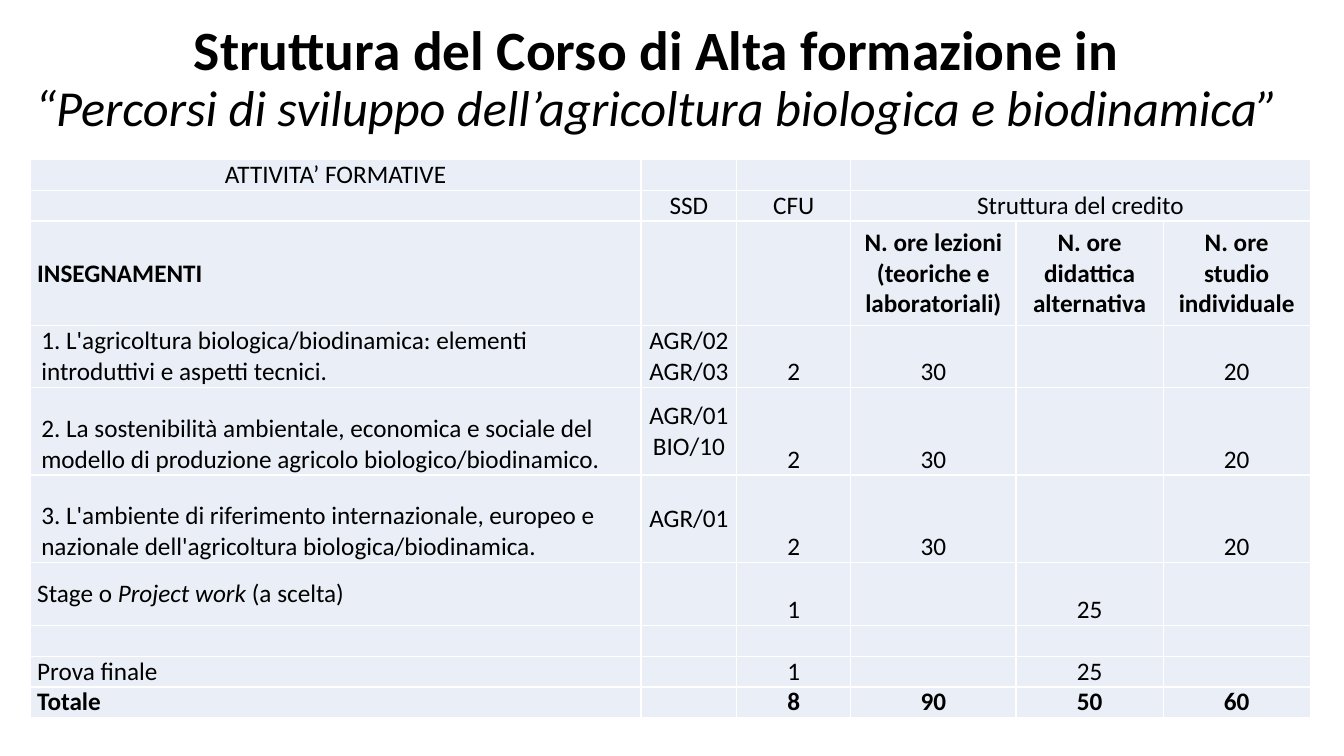
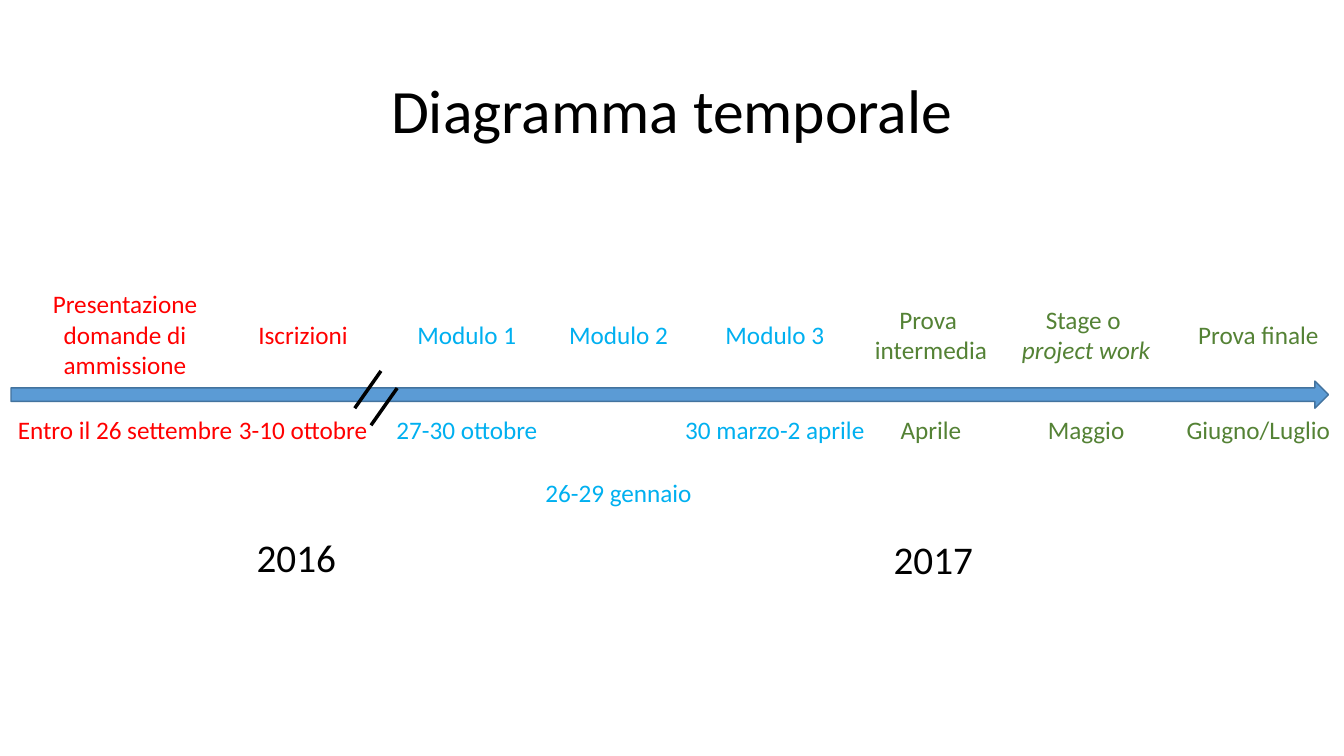
from dataclasses import dataclass
from typing import NamedTuple

from lxml import etree
from pptx import Presentation
from pptx import util as u
from pptx.dml.color import RGBColor
from pptx.enum import shapes, text
from pptx.oxml import ns

Pt = u.Pt
ALIGN, ANCHOR = text.PP_ALIGN, text.MSO_ANCHOR


@dataclass(frozen=True)
class Theme:
    font: str = "Calibri"
    ink: str = "000000"
    paper: str = "FFFFFF"
    cell: str = "EAEFF7"
    arrow: str = "5B9BD5"
    arrow_edge: str = "43739E"
    admission: str = "FF0000"
    module: str = "00B0F0"
    closing: str = "548235"
    title_size: float = 44
    course_size: float = 39.6
    subtitle_size: float = 36
    year_size: float = 28
    body_size: float = 18


THEME = Theme()


class Box(NamedTuple):
    left: float
    top: float
    width: float
    height: float

    def lengths(self) -> list[u.Length]:
        return [Pt(value) for value in self]


class Span(NamedTuple):
    text: str
    size: float = THEME.body_size
    bold: bool = False
    italic: bool = False
    color: str = THEME.ink


class Row(NamedTuple):
    height: float
    cells: tuple[str, ...]
    bold: bool = False
    first_align: ALIGN = ALIGN.LEFT
    first_anchor: ANCHOR = ANCHOR.MIDDLE
    other_anchor: ANCHOR = ANCHOR.BOTTOM
    indent: float = 0


class Event(NamedTuple):
    center: float
    color: str
    label: str
    label_width: float
    date: str
    date_width: float
    date_middle: float = 306.7
    wrap_label: bool = False


# Course table: asterisks enclose italics, a new line starts a paragraph
COLUMN_WIDTHS = (436.3, 68.4, 81.4, 118.1, 105.1, 105.1)
MERGED_ROWS = (0, 1)
COURSE = dict(first_anchor=ANCHOR.BOTTOM, indent=2.9)
ROWS = (
    Row(21.2, ("ATTIVITA’ FORMATIVE", "", "", "", "", ""), first_align=ALIGN.CENTER),
    Row(21.2, ("", "SSD", "CFU", "Struttura del credito", "", "")),
    Row(75, ("INSEGNAMENTI", "", "", "N. ore lezioni (teoriche e laboratoriali)",
             "N. ore didattica alternativa", "N. ore\nstudio individuale"),
        bold=True, other_anchor=ANCHOR.MIDDLE),
    Row(42, ("1. L'agricoltura biologica/biodinamica: elementi introduttivi e "
             "aspetti tecnici.", "AGR/02\nAGR/03", "2", "30", "", "20"), **COURSE),
    Row(62.5, ("2. La sostenibilità ambientale, economica e sociale del modello di "
               "produzione agricolo biologico/biodinamico.", "AGR/01\nBIO/10",
               "2", "30", "", "20"), **COURSE),
    Row(62.5, ("3. L'ambiente di riferimento internazionale, europeo e nazionale "
               "dell'agricoltura biologica/biodinamica.", "AGR/01",
               "2", "30", "", "20"), **COURSE),
    Row(45, ("Stage o *Project work *(a scelta)", "", "1", "", "25", "")),
    Row(21.2, ("",) * 6),
    Row(21.2, ("Prova finale", "", "1", "", "25", "")),
    Row(21.2, ("Totale", "", "8", "90", "50", "60"), bold=True),
)

# Timeline
LABEL_MIDDLE = 239
EVENTS = (
    Event(89.3, THEME.admission, "Presentazione domande di ammissione", 168.5,
          "Entro il 26 settembre", 170, wrap_label=True),
    Event(216.5, THEME.admission, "Iscrizioni", 79.2, "3-10 ottobre", 111.6),
    Event(333.5, THEME.module, "Modulo 1", 85.7, "27-30 ottobre", 116.6),
    Event(441.8, THEME.module, "Modulo 2", 85.7, "26-29 gennaio", 120.2, 352),
    Event(553.5, THEME.module, "Modulo 3", 85.7, "30 marzo-2 aprile", 144),
    Event(665, THEME.closing, "Prova \nintermedia", 95.8, "Aprile", 58.3),
    Event(775.8, THEME.closing, "Stage o \n*project work*", 107.3, "Maggio", 69.8),
    Event(898.8, THEME.closing, "Prova finale", 101.5, "Giugno/Luglio", 118),
)
YEARS = (("2016", 211.7, 397.8), ("2017", 666.7, 399.2))
BREAK_STARTS = ((253.4, 291.6), (265, 303.8))
BREAK_RUN, BREAK_RISE = 18.7, 26.6


def set_format(target, **values) -> None:
    for name, value in values.items():
        setattr(target, name, value)


def add_span(paragraph, span: Span) -> None:
    run = paragraph.add_run()
    run.text = span.text
    set_format(run.font, name=THEME.font, size=Pt(span.size), bold=span.bold,
               italic=span.italic)
    run.font.color.rgb = RGBColor.from_string(span.color)


def write_text(frame, content: str, align: ALIGN, style: Span, indent: float = 0) -> None:
    for index, line in enumerate(content.split("\n")):
        paragraph = frame.add_paragraph() if index else frame.paragraphs[0]
        paragraph.alignment = align
        if indent:
            paragraph._p.get_or_add_pPr().set("marL", str(Pt(indent)))
        for part, words in enumerate(line.split("*")):
            if words:
                add_span(paragraph, style._replace(text=words, italic=part % 2 == 1))


def add_titled_slide(deck, box: Box, lines: tuple[Span, ...]):
    slide = deck.slides.add_slide(deck.slide_layouts[5])
    title = slide.shapes.title
    set_format(title, **dict(zip(Box._fields, box.lengths())))
    set_format(title.text_frame, vertical_anchor=ANCHOR.MIDDLE, word_wrap=True,
               auto_size=text.MSO_AUTO_SIZE.NONE)
    paragraph = title.text_frame.paragraphs[0]
    set_format(paragraph, alignment=ALIGN.CENTER, line_spacing=0.9)
    for index, line in enumerate(lines):
        if index:
            paragraph.add_line_break()
        add_span(paragraph, line)
    return slide


def add_borders(cell) -> None:
    properties = cell._tc.get_or_add_tcPr()
    for index, side in enumerate(("a:lnL", "a:lnR", "a:lnT", "a:lnB")):
        border = etree.Element(ns.qn(side), w=str(Pt(1)))
        fill = etree.SubElement(border, ns.qn("a:solidFill"))
        etree.SubElement(fill, ns.qn("a:srgbClr"), val=THEME.paper)
        properties.insert(index, border)


def add_course_table(slide) -> None:
    box = Box(21.6, 113.8, sum(COLUMN_WIDTHS), sum(row.height for row in ROWS))
    table = slide.shapes.add_table(len(ROWS), len(COLUMN_WIDTHS), *box.lengths()).table
    set_format(table, first_row=False, horz_banding=False)
    for column, width in zip(table.columns, COLUMN_WIDTHS):
        column.width = Pt(width)
    for r, row in enumerate(ROWS):
        table.rows[r].height = Pt(row.height)
        for c, content in enumerate(row.cells):
            cell = table.cell(r, c)
            first = c == 0
            anchor = row.first_anchor if first else row.other_anchor
            set_format(cell, margin_left=Pt(5), margin_right=Pt(5), margin_top=0,
                       margin_bottom=0,
                       vertical_anchor=ANCHOR.MIDDLE if c == 1 else anchor)
            cell.fill.solid()
            cell.fill.fore_color.rgb = RGBColor.from_string(THEME.cell)
            add_borders(cell)
            write_text(cell.text_frame, content,
                       row.first_align if first else ALIGN.CENTER,
                       Span("", bold=row.bold), row.indent if first else 0)
    for r in MERGED_ROWS:
        table.cell(r, 3).merge(table.cell(r, 5))


def add_label(slide, box: Box, content: str, style: Span, wrap: bool = False) -> None:
    frame = slide.shapes.add_textbox(*box.lengths()).text_frame
    set_format(frame, word_wrap=wrap, auto_size=text.MSO_AUTO_SIZE.SHAPE_TO_FIT_TEXT)
    write_text(frame, content, ALIGN.CENTER, style)


def add_event(slide, event: Event) -> None:
    style = Span("", color=event.color)
    lines = 3 if event.wrap_label else event.label.count("\n") + 1
    for content, width, middle, height, wrap in (
        (event.label, event.label_width, LABEL_MIDDLE, 7.2 + 21.8 * lines, event.wrap_label),
        (event.date, event.date_width, event.date_middle, 29, False),
    ):
        box = Box(event.center - width / 2, middle - height / 2, width, height)
        add_label(slide, box, content, style, wrap)


def add_time_arrow(slide) -> None:
    arrow = slide.shapes.add_shape(shapes.MSO_SHAPE.RIGHT_ARROW,
                                   *Box(7.9, 272.2, 941, 19.4).lengths())
    arrow.shadow.inherit = False
    arrow.fill.solid()
    arrow.fill.fore_color.rgb = RGBColor.from_string(THEME.arrow)
    arrow.line.color.rgb = RGBColor.from_string(THEME.arrow_edge)
    arrow.line.width = Pt(1)


def add_break_stroke(slide, x: float, y: float) -> None:
    ends = (Pt(value) for value in (x, y, x + BREAK_RUN, y - BREAK_RISE))
    stroke = slide.shapes.add_connector(shapes.MSO_CONNECTOR.STRAIGHT, *ends)
    stroke.line.color.rgb = RGBColor.from_string(THEME.ink)
    stroke.line.width = Pt(2.5)
    etree.SubElement(stroke._element.spPr, ns.qn("a:effectLst"))


def main() -> None:
    deck = Presentation()
    set_format(deck, slide_width=Pt(960), slide_height=Pt(540))

    # Course structure
    structure = add_titled_slide(deck, Box(0, 5, 946.8, 104.4), (
        Span("Struttura del Corso di Alta formazione in ", THEME.course_size, bold=True),
        Span("“Percorsi di sviluppo dell’agricoltura biologica e biodinamica” ",
             THEME.subtitle_size, italic=True),
    ))
    add_course_table(structure)

    # Timeline
    timeline = add_titled_slide(deck, Box(66, 28.8, 828, 104.4),
                                (Span("Diagramma temporale", THEME.title_size),))
    add_time_arrow(timeline)
    for event in EVENTS:
        add_event(timeline, event)
    for year, center, middle in YEARS:
        add_label(timeline, Box(center - 36, middle - 20.5, 72, 41), year,
                  Span("", THEME.year_size))
    for start in BREAK_STARTS:
        add_break_stroke(timeline, *start)

    deck.save("out.pptx")


if __name__ == "__main__":
    main()
